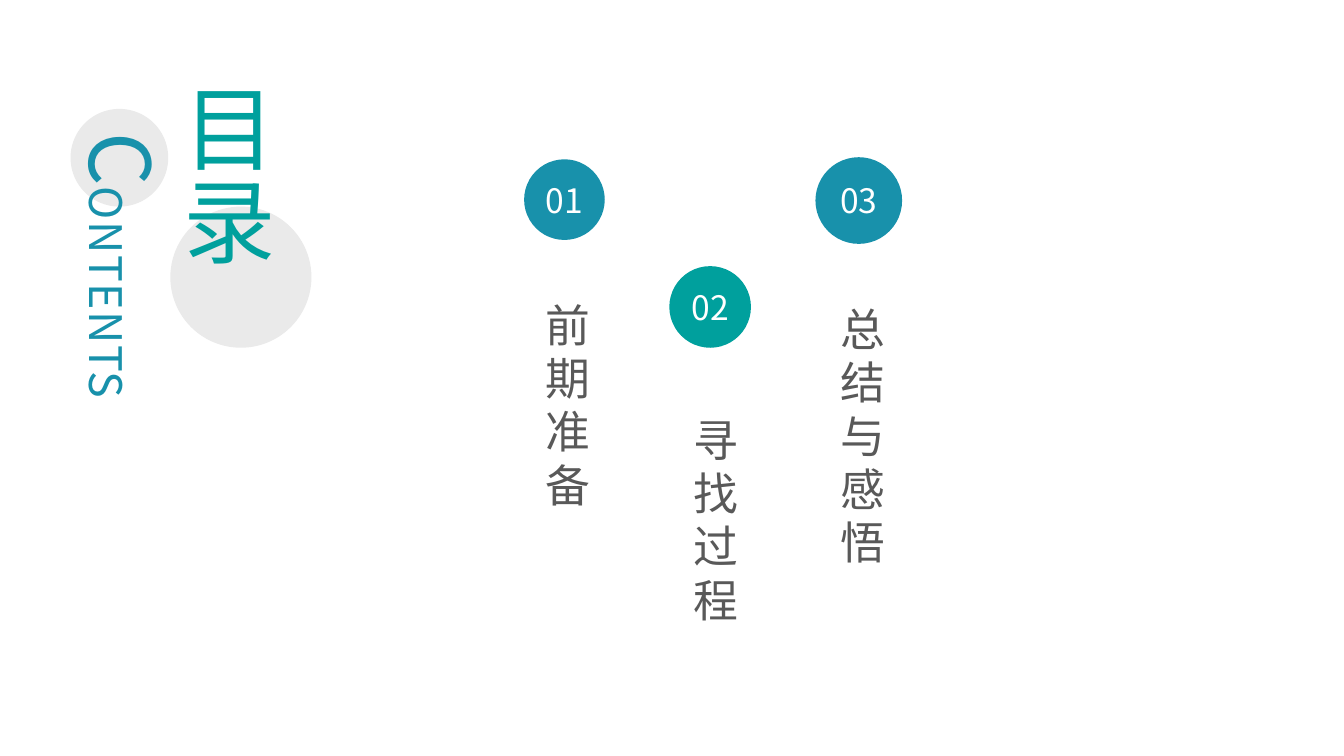
"""Build a contents slide with vertical Chinese headings and numbered circles."""
from pptx import Presentation
from pptx.dml.color import RGBColor
from pptx.enum.shapes import MSO_SHAPE as SHAPE
from pptx.enum.text import MSO_ANCHOR as ANCHOR, MSO_AUTO_SIZE as AUTO, PP_ALIGN as ALIGN
from pptx.oxml.ns import qn
from pptx.util import Pt

FONT = "Noto Sans CJK SC"
BLUE = RGBColor(0x18, 0x91, 0xAB)
TEAL = RGBColor(0x00, 0xA0, 0x9D)
PALE = RGBColor(0xEA, 0xEA, 0xEA)
GREY = RGBColor(0x59, 0x59, 0x59)
WHITE = RGBColor(0xFF, 0xFF, 0xFF)


def add_circle(left, top, size, color):
    sp = s.shapes.add_shape(SHAPE.OVAL, Pt(left), Pt(top), Pt(size), Pt(size))
    sp.shadow.inherit = False
    sp.fill.solid()
    sp.fill.fore_color.rgb = color
    sp.line.fill.background()
    return sp


def set_text(sp, parts, color, align=ALIGN.LEFT, vertical=True, spacing=0, insets=(0, 0)):
    tf = sp.text_frame
    tf.word_wrap = True
    tf.auto_size = AUTO.NONE
    tf.vertical_anchor = ANCHOR.MIDDLE
    tf.margin_left = tf.margin_right = tf.margin_bottom = Pt(insets[0])
    tf.margin_top = Pt(insets[1])
    if vertical:
        tf._txBody.bodyPr.set("vert", "eaVert")
    p = tf.paragraphs[0]
    p.alignment = align
    for text, size in parts:
        r = p.add_run()
        r.text = text
        r.font.size = Pt(size)
        r.font.name = FONT
        r.font.color.rgb = color
        rPr = r._r.get_or_add_rPr()
        rPr.set("spc", str(spacing * 100))
        rPr.find(qn("a:latin")).addnext(rPr.makeelement(qn("a:ea"), {"typeface": FONT}))


prs = Presentation()
prs.slide_width, prs.slide_height = Pt(960), Pt(540)
s = prs.slides.add_slide(prs.slide_layouts[5])

title = s.shapes.title
for left, top, size in [(121.7, 147.6, 100.8), (50.4, 77.8, 69.8)]:
    title._element.addprevious(add_circle(left, top, size, PALE)._element)

title.left, title.top, title.width, title.height = Pt(105.1), Pt(55.4), Pt(113), Pt(183.6)
set_text(title, [("目录", 66)], TEAL, insets=(3.6, 3.6))

contents = s.shapes.add_textbox(Pt(46.8), Pt(94.3), Pt(82.8), Pt(390.2))
set_text(contents, [("C", 60), ("ONTENTS", 32)], BLUE, spacing=1)

sections = [
    ("01", "前期准备", BLUE, (374.4, 113.8, 57.6), (375.1, 190.1, 239.8)),
    ("02", "寻找过程", TEAL, (478.1, 190.1, 58.3), (481, 272.2, 227.5)),
    ("03", "总结与感悟", BLUE, (582.5, 112.3, 61.9), (586.1, 193, 229)),
]
for number, heading, color, circle, (left, top, height) in sections:
    set_text(add_circle(*circle, color), [(number, 24)], WHITE, ALIGN.CENTER, vertical=False)
    box = s.shapes.add_textbox(Pt(left), Pt(top), Pt(58.3), Pt(height))
    set_text(box, [(heading, 32)], GREY, spacing=6, insets=(0, 26.4))

prs.save("out.pptx")
